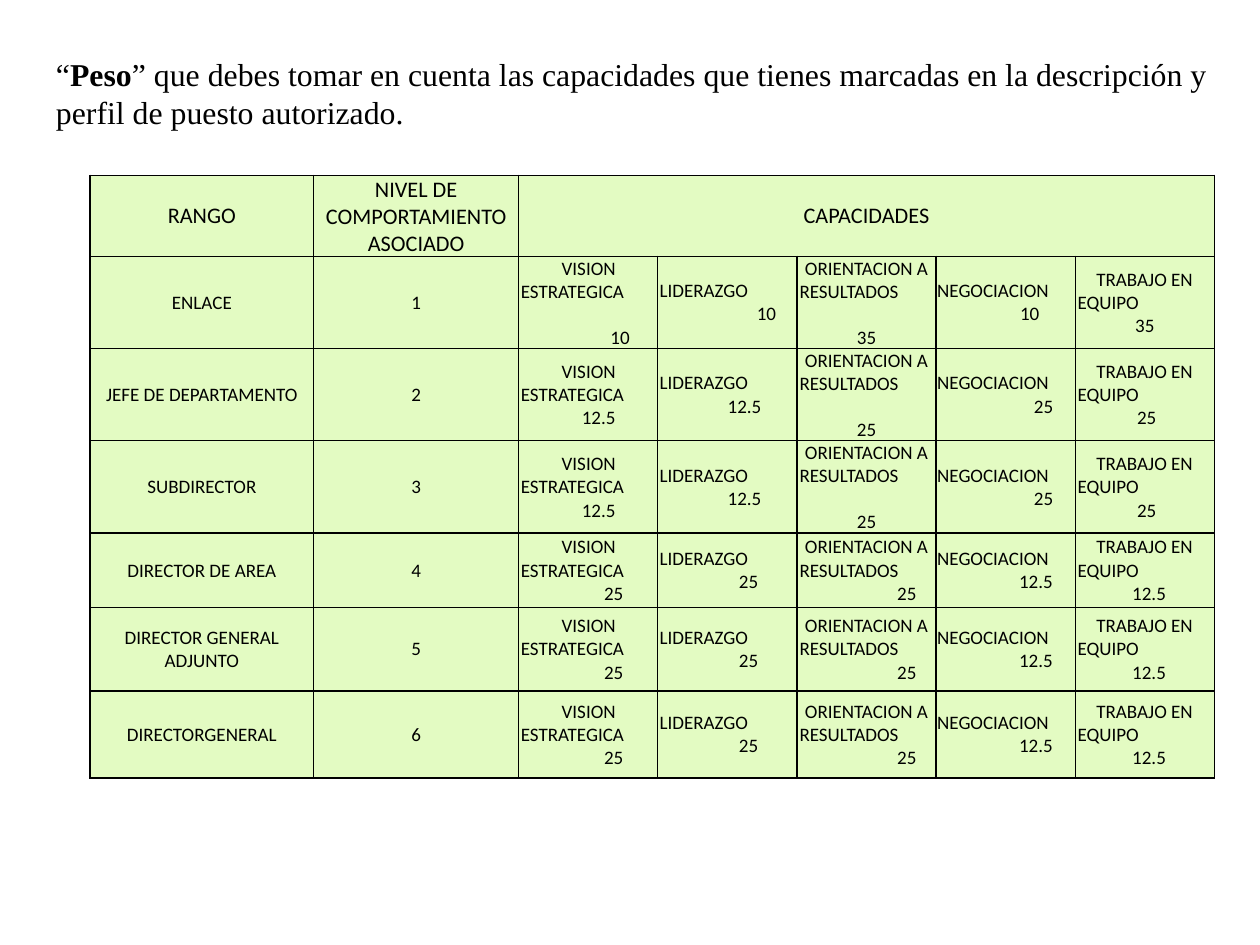
from lxml.etree import SubElement
from pptx import Presentation
from pptx.dml.color import RGBColor
from pptx.enum.text import MSO_ANCHOR, PP_ALIGN
from pptx.oxml.ns import qn
from pptx.util import Pt

# Content
TITLE = [
    ("“", False),
    ("Peso", True),
    ("” que debes tomar en cuenta las capacidades que tienes marcadas "
     "en la descripción y perfil de puesto autorizado.", False),
]
HEADERS = ["RANGO", "NIVEL DE COMPORTAMIENTO ASOCIADO", "CAPACIDADES"]
# Capacity name, left margin of its first line, left margin of the next line
CAPACITIES = [
    ("VISION ESTRATEGICA", 26.5, 0.8),
    ("LIDERAZGO", 0.5, 0.5),
    ("ORIENTACION A RESULTADOS", 4.4, 1),
    ("NEGOCIACION", 0, 0),
    ("TRABAJO EN EQUIPO", 12.6, 0.8),
]
# Left margin of each weight, by kind of row
ENTRY = [57.2, 61.7, 37.1, 52.2, 37.1]
MIDDLE = [39.2, 43.4, 37.1, 61, 38.3]
SENIOR = [53.2, 50.5, 62.5, 51.6, 35.2]
# Rank, weights, weight margins, capacities with a gap above the weight
RANKS = [
    ("ENLACE", ["10", "10", "35", "10", "35"], ENTRY, {0, 2}),
    ("JEFE DE DEPARTAMENTO", ["12.5", "12.5", "25", "25", "25"], MIDDLE, {2}),
    ("SUBDIRECTOR", ["12.5", "12.5", "25", "25", "25"], MIDDLE, {2}),
    ("DIRECTOR DE AREA", ["25", "25", "25", "12.5", "12.5"], SENIOR, set()),
    ("DIRECTOR GENERAL ADJUNTO", ["25", "25", "25", "12.5", "12.5"], SENIOR, set()),
    ("DIRECTORGENERAL", ["25", "25", "25", "12.5", "12.5"], SENIOR, set()),
]
COLUMN_WIDTHS = [141, 129] + [87.7] * 5
ROW_HEIGHTS = [44.6, 51.8, 48.2, 54, 46.8, 52.6, 55]
LINE_GAP = 14.4
BLACK, GREEN, WHITE = "000000", "E3FBC2", "FFFFFF"


def color(value):
    return RGBColor.from_string(value)


def style_font(font, name, size, bold=False):
    font.name, font.size, font.bold = name, Pt(size), bold
    font.color.rgb = color(BLACK)


def style_cell(cell):
    cell.vertical_anchor = MSO_ANCHOR.MIDDLE
    cell.margin_left = cell.margin_right = Pt(0.7)
    cell.margin_top = Pt(0.5)
    cell.margin_bottom = 0
    properties = cell._tc.get_or_add_tcPr()
    for side in ("lnL", "lnR", "lnT", "lnB"):
        line = SubElement(properties, qn(f"a:{side}"), w=str(Pt(1)))
        fill = SubElement(line, qn("a:solidFill"))
        SubElement(fill, qn("a:srgbClr"), val=BLACK)
    cell.fill.solid()
    cell.fill.fore_color.rgb = color(GREEN)


def write_centered(cell, text, size):
    para = cell.text_frame.paragraphs[0]
    para.text = text
    para.alignment = PP_ALIGN.CENTER
    style_font(para.runs[0].font, "Calibri", size)


def write_indented(para, text, first, rest):
    para.text = text
    para.alignment = PP_ALIGN.LEFT
    properties = para._p.get_or_add_pPr()
    properties.set("marL", str(Pt(rest)))
    properties.set("indent", str(Pt(first - rest)))
    style_font(para.runs[0].font, "Calibri", 12)


# Page
deck = Presentation()
deck.slide_width, deck.slide_height = Pt(793.75), Pt(595.25)
page = deck.slides.add_slide(deck.slide_layouts[6])
page.background.fill.solid()
page.background.fill.fore_color.rgb = color(WHITE)

# Title
box = page.shapes.add_textbox(Pt(28.2), Pt(31), Pt(744.5), Pt(55.5))
box.text_frame.word_wrap = True
para = box.text_frame.paragraphs[0]
for text, bold in TITLE:
    span = para.add_run()
    span.text = text
    style_font(span.font, "Times New Roman", 20, bold)

# Table grid
table = page.shapes.add_table(
    len(ROW_HEIGHTS), len(COLUMN_WIDTHS), Pt(56.7), Pt(110.5),
    Pt(sum(COLUMN_WIDTHS)), Pt(sum(ROW_HEIGHTS))).table
table.first_row = table.horz_banding = False
for column, width in zip(table.columns, COLUMN_WIDTHS):
    column.width = Pt(width)
for row, height in zip(table.rows, ROW_HEIGHTS):
    row.height = Pt(height)
for cell in table.iter_cells():
    style_cell(cell)

# Header row
table.cell(0, 2).merge(table.cell(0, 6))
for index, header in enumerate(HEADERS):
    write_centered(table.cell(0, index), header, 14)

# Ranks with the weight of each capacity
for level, (rank, weights, margins, gaps) in enumerate(RANKS, 1):
    write_centered(table.cell(level, 0), rank, 12)
    write_centered(table.cell(level, 1), str(level), 12)
    for index, (name, first, rest) in enumerate(CAPACITIES):
        frame = table.cell(level, index + 2).text_frame
        write_indented(frame.paragraphs[0], name, first, rest)
        weight = frame.add_paragraph()
        write_indented(weight, weights[index], margins[index], margins[index])
        if index in gaps:
            weight.space_before = Pt(LINE_GAP)

deck.save("out.pptx")
